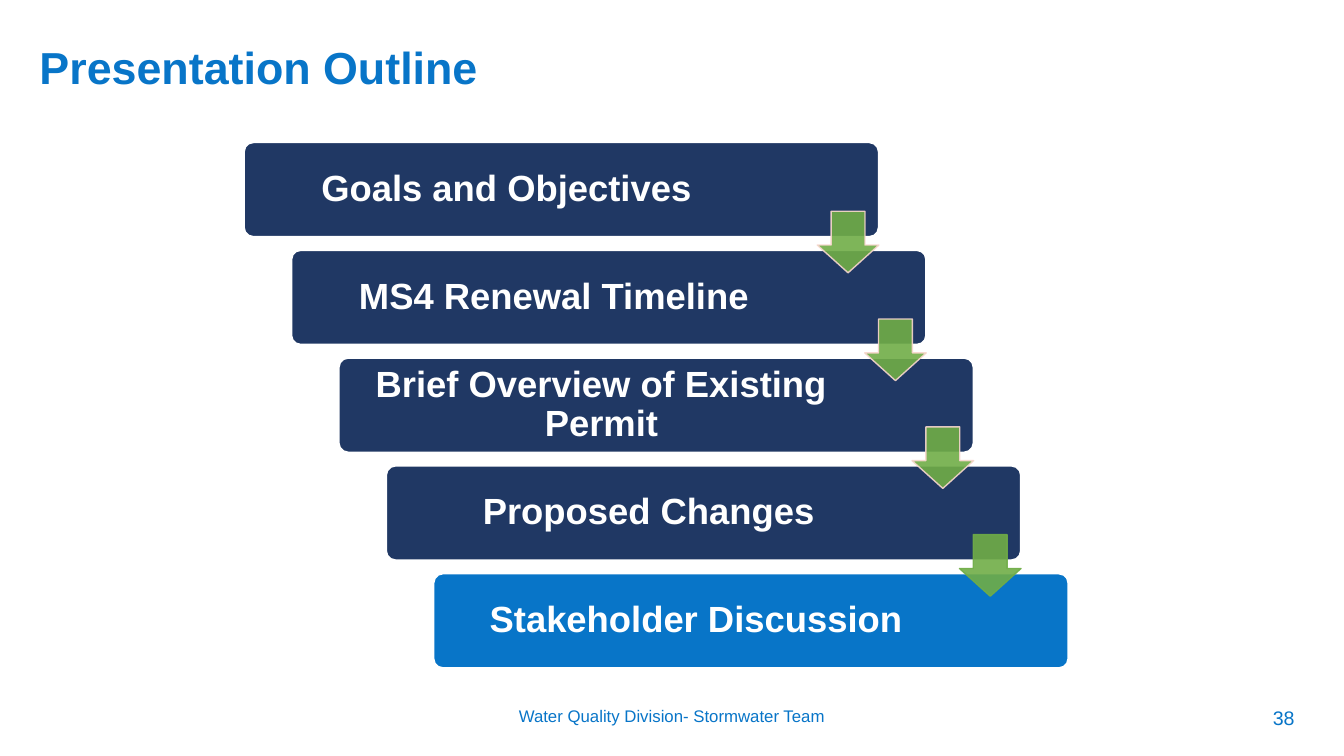
import pptx
import pptx.dml.color
import pptx.enum.shapes
import pptx.enum.text
import pptx.oxml
import pptx.oxml.ns
import pptx.util

Pt = pptx.util.Pt
SHAPES = pptx.enum.shapes.MSO_SHAPE
ALIGN = pptx.enum.text.PP_ALIGN
ANCHOR = pptx.enum.text.MSO_ANCHOR

BLUE, NAVY, GREEN, PINK, WHITE = "0875C8", "203864", "70AD47", "F8D7CE", "FFFFFF"

TOPICS = [
    "Goals and Objectives",
    "MS4 Renewal Timeline",
    "Brief Overview of Existing Permit",
    "Proposed Changes",
    "Stakeholder Discussion",
]


def color(hex_value):
    return pptx.dml.color.RGBColor.from_string(hex_value)


def set_text(frame, text, size, hex_value, bold=False, align=ALIGN.CENTER):
    frame.word_wrap = True
    frame.text = text
    line = frame.paragraphs[0]
    line.alignment = align
    line.font.name = "Arial"
    line.font.size = Pt(size)
    line.font.bold = bold
    line.font.color.rgb = color(hex_value)
    return line


def add_block(slide, preset, box, fill, outline, outline_width, adjustments):
    block = slide.shapes.add_shape(preset, *map(Pt, box))
    block.shadow.inherit = False
    for index, value in enumerate(adjustments):
        block.adjustments[index] = value
    block.fill.solid()
    block.fill.fore_color.rgb = color(fill)
    block.line.color.rgb = color(outline)
    block.line.width = Pt(outline_width)
    return block


def set_opacity(block, percent):
    """Apply one opacity to both the fill and the outline."""
    for shade in block.fill._xPr.iter(pptx.oxml.ns.qn("a:srgbClr")):
        alpha = shade.makeelement(pptx.oxml.ns.qn("a:alpha"), {"val": str(percent * 1000)})
        shade.append(alpha)


def add_title(slide, box):
    title = slide.shapes.title
    title.left, title.top, title.width, title.height = map(Pt, box)
    frame = title.text_frame
    frame.auto_size = pptx.enum.text.MSO_AUTO_SIZE.NONE
    frame.vertical_anchor = ANCHOR.TOP
    set_text(frame, "Presentation Outline", 32, BLUE, True, ALIGN.LEFT).line_spacing = 0.9


def add_topic(slide, topic, box, fill):
    bar = add_block(slide, SHAPES.ROUNDED_RECTANGLE, box, fill, WHITE, 1.5, [0.1])
    frame = bar.text_frame
    frame.vertical_anchor = ANCHOR.MIDDLE
    frame.margin_left = frame.margin_top = frame.margin_bottom = Pt(8)
    frame.margin_right = Pt(86)  # keeps the text clear of the arrows
    set_text(frame, topic, 26, WHITE, True).line_spacing = 0.9


def add_staircase(slide, box):
    """Equal bars stepping down and right, joined by arrows."""
    left, top, width, height = box
    bar_width, bar_height, arrow_size = 453.6, 67.7, 44
    last = len(TOPICS) - 1
    step_x = (width - bar_width) / last
    step_y = (height - bar_height) / last
    corners = [(left + i * step_x, top + i * step_y) for i in range(len(TOPICS))]

    # Topic bars
    for topic, (x, y) in zip(TOPICS, corners):
        fill = BLUE if topic == TOPICS[last] else NAVY
        add_topic(slide, topic, (x, y, bar_width, bar_height), fill)

    # Arrows between neighbouring bars
    for i, (x, y) in enumerate(corners[:last]):
        arrow_box = (x + bar_width - arrow_size, y + 49.3, arrow_size, arrow_size)
        outline = GREEN if i == last - 1 else PINK
        arrow = add_block(slide, SHAPES.DOWN_ARROW, arrow_box, GREEN, outline, 1, [0.55, 0.45])
        set_opacity(arrow, 90)


def add_footer(slide, box, text, size):
    footer = slide.shapes.add_textbox(*map(Pt, box))
    set_text(footer.text_frame, text, size, BLUE)


def main():
    deck = pptx.Presentation()
    deck.slide_width, deck.slide_height = Pt(960), Pt(540)
    slide = deck.slides.add_slide(deck.slide_layouts[5])  # title only

    add_title(slide, (21, 29, 895, 49))
    # Footer and page number
    add_footer(slide, (318, 500.4, 324, 28.8), "Water Quality Division- Stormwater Team", 12)
    add_footer(slide, (885, 500.4, 64, 28.8), "38", 14)
    add_staircase(slide, (174.2, 101.6, 589, 375.7))

    deck.save("out.pptx")


if __name__ == "__main__":
    main()
